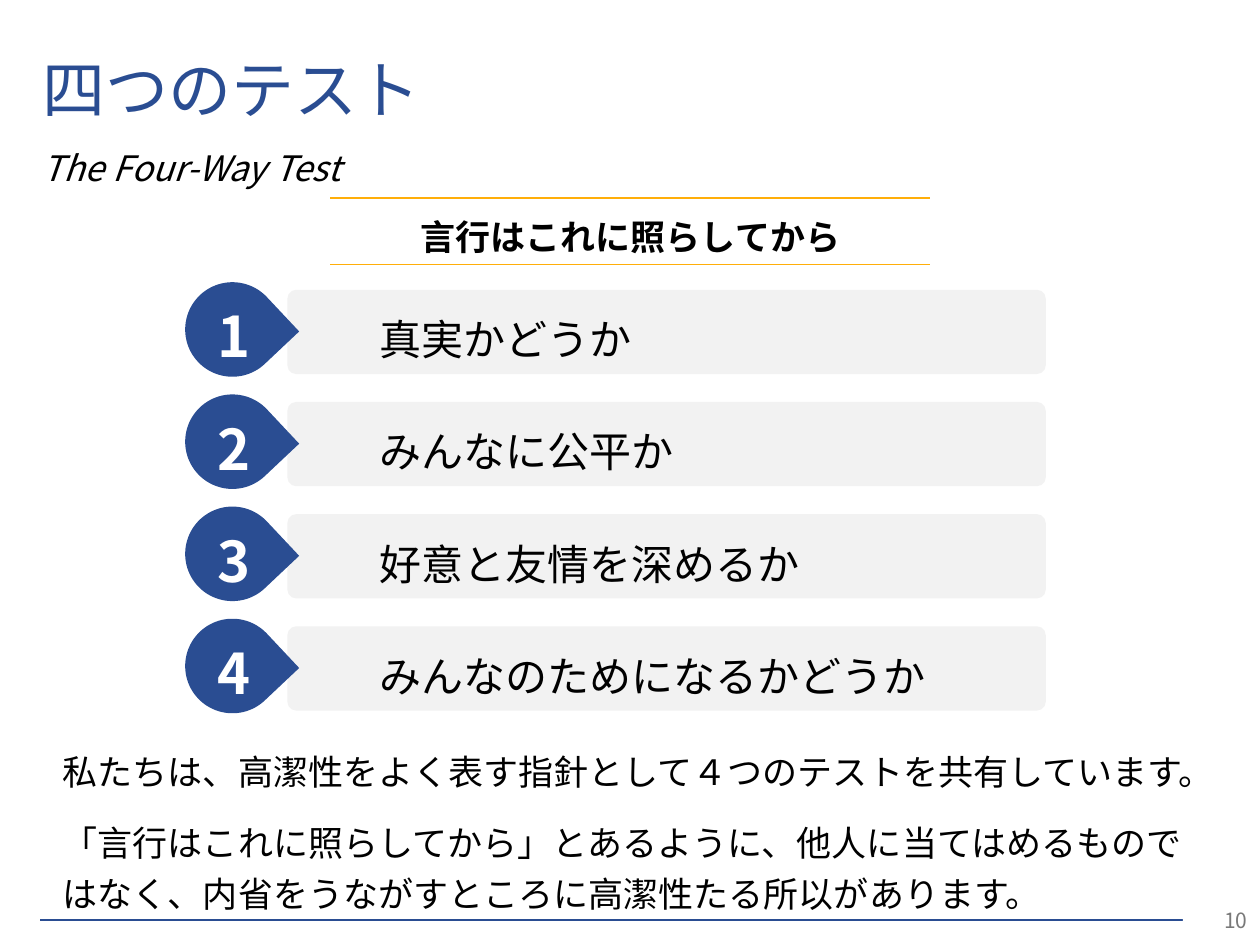
"""Build the Four-Way Test slide with its four numbered questions."""
from dataclasses import dataclass
from typing import Any, Optional

from lxml import etree
from pptx import Presentation
from pptx.dml.color import RGBColor
from pptx.enum import shapes, text
from pptx.oxml import ns
from pptx.util import Pt

FONT = "Noto Sans CJK JP"
BLUE, GOLD, GREY, WHITE, BLACK = "2A4D92", "FFAE09", "F2F2F2", "FFFFFF", "000000"
LEFT, CENTER, RIGHT = text.PP_ALIGN.LEFT, text.PP_ALIGN.CENTER, text.PP_ALIGN.RIGHT
TOP, MIDDLE = text.MSO_ANCHOR.TOP, text.MSO_ANCHOR.MIDDLE
ROW_PITCH = 64.1
QUESTIONS = [
    "真実かどうか",
    "みんなに公平か",
    "好意と友情を深めるか",
    "みんなのためになるかどうか",
]
CLOSING = (
    "私たちは、高潔性をよく表す指針として４つのテストを共有しています。\n"
    "「言行はこれに照らしてから」とあるように、他人に当てはめるものではなく、"
    "内省をうながすところに高潔性たる所以があります。"
)


@dataclass(frozen=True)
class Box:
    """Position and size in points."""
    left: float
    top: float
    width: float
    height: float

    def emu(self) -> tuple:
        """Return the four lengths for python-pptx."""
        return Pt(self.left), Pt(self.top), Pt(self.width), Pt(self.height)

    def down(self, distance: float) -> "Box":
        """Return the box moved down by a distance."""
        return Box(self.left, self.top + distance, self.width, self.height)


@dataclass(frozen=True)
class Style:
    """Look of the text in one frame."""
    size: float
    color: str = BLACK
    bold: bool = False
    italic: bool = False
    align: Any = LEFT
    anchor: Any = TOP
    spacing: Optional[float] = None
    after: float = 0
    wrap: bool = True


def rgb(color: str) -> RGBColor:
    """Turn a hex string into a colour."""
    return RGBColor.from_string(color)


def write(frame: Any, words: str, style: Style) -> None:
    """Fill a text frame and format its paragraphs and runs."""
    frame.text = words
    frame.word_wrap = style.wrap
    frame.vertical_anchor = style.anchor
    for paragraph in frame.paragraphs:
        paragraph.alignment = style.align
        paragraph.space_after = Pt(style.after)
        if style.spacing:
            paragraph.line_spacing = style.spacing
        for run in paragraph.runs:
            run.font.size = Pt(style.size)
            run.font.bold, run.font.italic = style.bold, style.italic
            run.font.color.rgb = rgb(style.color)
            run.font.name = FONT
            properties = run._r.get_or_add_rPr()
            etree.SubElement(properties, ns.qn("a:ea"), typeface=FONT)


def add_text(parent: Any, box: Box, words: str, style: Style) -> None:
    """Add a text box that grows with its words."""
    frame = parent.add_textbox(*box.emu()).text_frame
    write(frame, words, style)
    frame.auto_size = text.MSO_AUTO_SIZE.SHAPE_TO_FIT_TEXT


def add_filled(parent: Any, preset: Any, box: Box, color: str) -> Any:
    """Add a flat preset shape without an outline."""
    shape = parent.add_shape(preset, *box.emu())
    shape.shadow.inherit = False
    shape.fill.solid()
    shape.fill.fore_color.rgb = rgb(color)
    shape.line.fill.background()
    return shape


def add_rule(parent: Any, start: float, end: float, height: float, color: str) -> None:
    """Add a thin horizontal line."""
    rule = parent.add_connector(
        shapes.MSO_CONNECTOR.STRAIGHT, Pt(start), Pt(height), Pt(end), Pt(height))
    rule.line.color.rgb = rgb(color)
    rule.line.width = Pt(1)
    etree.SubElement(rule._element.spPr, ns.qn("a:effectLst"))


def add_question(parent: Any, index: int, question: str) -> None:
    """Add one question bar with its numbered drop."""
    offset = index * ROW_PITCH
    bar = add_filled(parent, shapes.MSO_SHAPE.ROUNDED_RECTANGLE,
                     Box(164.2, 165.6, 433.4, 48.2).down(offset), GREY)
    bar.adjustments[0] = 0.106
    frame = bar.text_frame
    frame.margin_left, frame.margin_top = Pt(51.1), Pt(5.8)
    write(frame, question, Style(24, anchor=MIDDLE, spacing=1.2, after=12))

    badge = parent.add_group_shape().shapes
    drop = add_filled(badge, shapes.MSO_SHAPE.TEAR,
                      Box(105.8, 161.3, 54, 54).down(offset), BLUE)
    drop.rotation = 46.7
    add_text(badge, Box(115.2, 162, 36.7, 51.8).down(offset), str(index + 1),
             Style(32, WHITE, bold=True, align=CENTER, anchor=MIDDLE,
                   spacing=1.2, after=12, wrap=False))


def main() -> None:
    """Build and save the presentation."""
    presentation = Presentation()
    presentation.slide_width, presentation.slide_height = Pt(720), Pt(540)
    slide = presentation.slides.add_slide(presentation.slide_layouts[5])
    canvas = slide.shapes

    title = canvas.title
    title.left, title.top, title.width, title.height = Box(17.3, 31.7, 699.8, 43.2).emu()
    write(title.text_frame, "四つのテスト", Style(36, BLUE, anchor=MIDDLE, spacing=0.9))
    title.text_frame.auto_size = text.MSO_AUTO_SIZE.NONE

    add_rule(canvas, 23, 676, 525.6, BLUE)
    page_number = add_filled(canvas, shapes.MSO_SHAPE.RECTANGLE,
                             Box(676, 511.2, 44, 28.8), WHITE)
    write(page_number.text_frame, "10", Style(12, "797979", align=RIGHT, anchor=MIDDLE))

    add_text(canvas, Box(17.3, 75.6, 200.2, 35.3), "The Four-Way Test",
             Style(20, italic=True, spacing=1.2, after=12, wrap=False))
    add_text(canvas, Box(28.8, 420.5, 662.4, 105.1), CLOSING,
             Style(20, spacing=1.2, after=12))
    add_text(canvas, Box(231.8, 119.5, 257, 31.7), "言行はこれに照らしてから",
             Style(20, bold=True, align=CENTER, wrap=False))
    for height in (113, 151.2):
        add_rule(canvas, 188.6, 531.4, height, GOLD)

    for index, question in enumerate(QUESTIONS):
        add_question(canvas, index, question)

    presentation.save("out.pptx")


if __name__ == "__main__":
    main()
